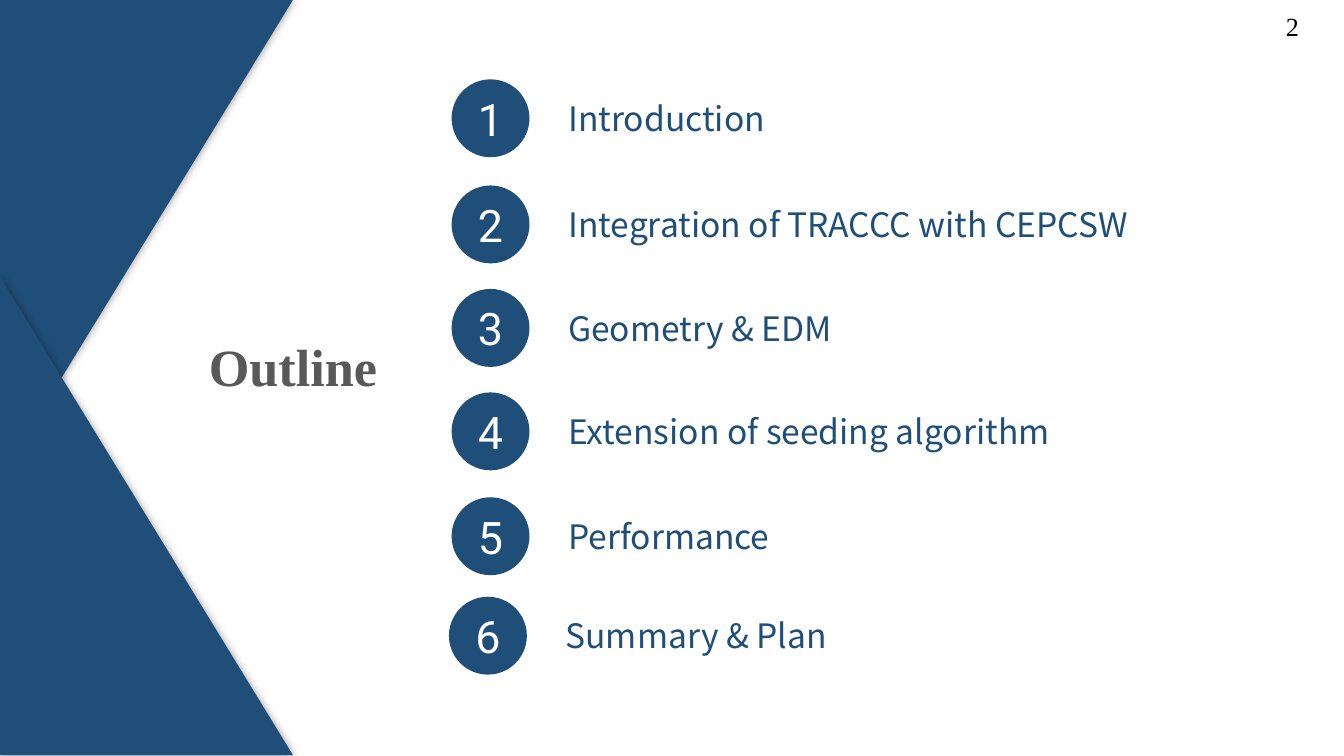
from dataclasses import dataclass

import pptx
import pptx.dml.color
import pptx.enum.shapes
import pptx.enum.text
import pptx.oxml
import pptx.oxml.ns
import pptx.util
from pptx.util import Inches

COLORS = {"navy": "1F4E78", "gray": "595959", "white": "FFFFFF", "black": "000000"}
BADGE_SIZE = 0.58
LABEL_DX, LABEL_DY, LABEL_HEIGHT = 0.77, 0.09, 0.4
SHAPE = pptx.enum.shapes.MSO_SHAPE
ALIGN = pptx.enum.text.PP_ALIGN


@dataclass
class Topic:
    title: str
    top: float
    width: float
    left: float = 3.36


@dataclass
class Style:
    font: str
    size: float
    color: str
    bold: bool = False
    align: ALIGN = ALIGN.LEFT


BADGE = Style("Roboto", 24, "white", align=ALIGN.CENTER)
LABEL = Style("Noto Sans CJK SC", 18, "navy")
HEADING = Style("Times New Roman", 28, "gray", True, ALIGN.CENTER)
PAGE = Style("Times New Roman", 14, "black")

TOPICS = [
    Topic("Introduction", 0.59, 1.7),
    Topic("Integration of TRACCC with CEPCSW", 1.38, 4.61),
    Topic("Geometry & EDM", 2.15, 2.43),
    Topic("Extension of seeding algorithm", 2.92, 3.96),
    Topic("Performance", 3.7, 1.74),
    Topic("Summary & Plan", 4.44, 2.24, 3.34),
]


def rgb(name: str) -> pptx.dml.color.RGBColor:
    return pptx.dml.color.RGBColor.from_string(COLORS[name])


def write(tf, text: str, style: Style) -> None:
    p = tf.paragraphs[0]
    p.alignment = style.align
    r = p.add_run()
    r.text = text
    r.font.name = style.font
    r.font.size = pptx.util.Pt(style.size)
    r.font.bold = style.bold
    r.font.color.rgb = rgb(style.color)


def add_text(shapes, text: str, left: float, top: float, width: float,
             height: float, style: Style, wrap: bool = True) -> None:
    s = shapes.add_textbox(Inches(left), Inches(top), Inches(width), Inches(height))
    tf = s.text_frame
    tf.word_wrap = wrap
    if not wrap:
        tf.auto_size = pptx.enum.text.MSO_AUTO_SIZE.SHAPE_TO_FIT_TEXT
    write(tf, text, style)


def add_solid(shapes, kind: SHAPE, left: float, top: float, width: float, height: float):
    s = shapes.add_shape(kind, Inches(left), Inches(top), Inches(width), Inches(height))
    s.shadow.inherit = False
    s.fill.solid()
    s.fill.fore_color.rgb = rgb("navy")
    s.line.fill.background()
    return s


def add_wedge(shapes, top: float, flips: tuple[str, ...]) -> None:
    s = add_solid(shapes, SHAPE.RIGHT_TRIANGLE, -0.69, top, 3.56, 2.18)
    s.rotation = 270
    sp_pr = s._element.spPr
    for flip in flips:
        sp_pr.find(pptx.oxml.ns.qn("a:xfrm")).set(flip, "1")
    shadow = pptx.oxml.parse_xml(
        f'<a:outerShdw {pptx.oxml.ns.nsdecls("a")} blurRad="{pptx.util.Pt(5)}" '
        'dist="0" dir="0" algn="ctr" rotWithShape="0">'
        f'<a:srgbClr val="{COLORS["black"]}"><a:alpha val="40000"/></a:srgbClr>'
        "</a:outerShdw>"
    )
    sp_pr.find(pptx.oxml.ns.qn("a:effectLst")).append(shadow)


def add_topic(shapes, number: int, topic: Topic) -> None:
    s = add_solid(shapes, SHAPE.OVAL, topic.left, topic.top, BADGE_SIZE, BADGE_SIZE)
    tf = s.text_frame
    tf.vertical_anchor = pptx.enum.text.MSO_ANCHOR.MIDDLE
    write(tf, str(number), BADGE)
    add_text(shapes, topic.title, topic.left + LABEL_DX, topic.top + LABEL_DY,
             topic.width, LABEL_HEIGHT, LABEL, wrap=False)


def main() -> None:
    prs = pptx.Presentation()
    prs.slide_width = Inches(10)
    prs.slide_height = Inches(10 * 9 / 16)
    shapes = prs.slides.add_slide(prs.slide_layouts[6]).shapes

    wedges = shapes.add_group_shape().shapes
    add_wedge(wedges, 0.69, ("flipH", "flipV"))
    add_wedge(wedges, 2.75, ("flipV",))

    add_text(shapes, "Outline", 0.61, 2.44, 3.14, 0.58, HEADING)
    for number, topic in enumerate(TOPICS, 1):
        add_topic(shapes, number, topic)
    add_text(shapes, "2", 9.47, 0.03, 0.47, 0.26, PAGE)

    prs.save("out.pptx")


if __name__ == "__main__":
    main()
